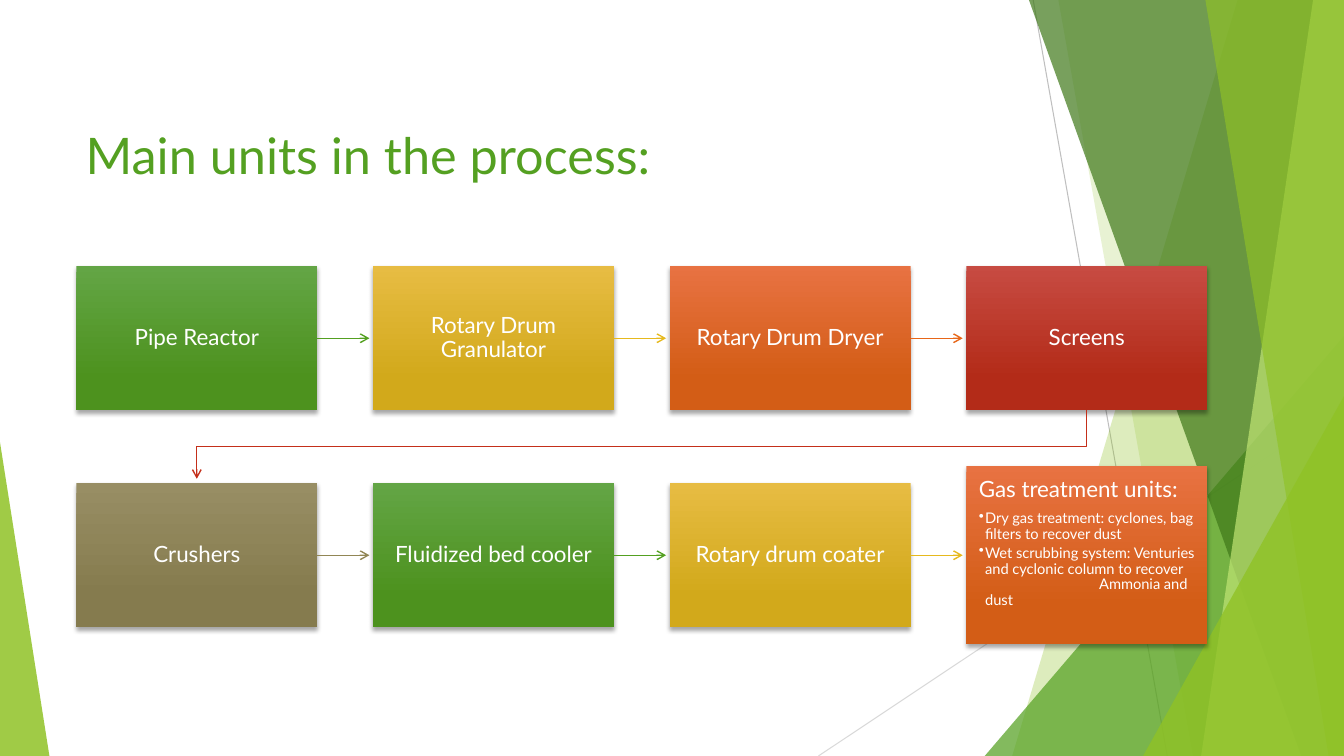
from dataclasses import dataclass, field

from lxml import etree
from pptx import Presentation
from pptx.dml.color import RGBColor
from pptx.enum.shapes import MSO_CONNECTOR, MSO_SHAPE
from pptx.enum.text import MSO_ANCHOR, MSO_AUTO_SIZE, PP_ALIGN
from pptx.oxml.ns import qn
from pptx.util import Pt

STRAIGHT = MSO_CONNECTOR.STRAIGHT
RECTANGLE, TRIANGLE = MSO_SHAPE.RECTANGLE, MSO_SHAPE.ISOSCELES_TRIANGLE
TOP, MIDDLE, BOTTOM = MSO_ANCHOR.TOP, MSO_ANCHOR.MIDDLE, MSO_ANCHOR.BOTTOM
LEFT, CENTER = PP_ALIGN.LEFT, PP_ALIGN.CENTER
NO_AUTO_SIZE = MSO_AUTO_SIZE.NONE
RIGHT_SIDE = 3


@dataclass
class Theme:
    """Colours, font and type sizes of the slide."""
    font: str = "Lato"
    title_size: float = 36
    box_size: float = 16
    bullet_size: float = 10.5
    white: str = "FFFFFF"
    title: str = "54A021"
    shadow: str = "000000"
    lime: str = "90C226"
    pale_lime: str = "C0E474"
    green: str = "54A021"
    dark_green: str = "3F7819"
    rule: str = "BFBFBF"
    pale_rule: str = "D9D9D9"
    ramps: dict = field(default_factory=lambda: {
        "green": ("54A021", "63A545", "4D921E"),
        "yellow": ("E6B91E", "E7BC43", "D2A91B"),
        "orange": ("E76618", "E87242", "D35D16"),
        "red": ("C42F1A", "C74B42", "B32B18"),
        "olive": ("918655", "988E64", "857B4E"),
    })


class SlideBuilder:
    """Draws styled elements on one slide."""

    def __init__(self, slide, theme):
        """Keep the slide and its theme."""
        self.slide, self.shapes, self.theme = slide, slide.shapes, theme

    def apply(self, target, formats):
        """Set each attribute named in formats."""
        for name, value in formats.items():
            setattr(target, name, value)

    def place(self, shape, left, top, width, height):
        """Move and size a shape in points."""
        self.apply(shape, {"left": Pt(left), "top": Pt(top), "width": Pt(width), "height": Pt(height)})

    def set_text(self, paragraph, text, size, color, formats):
        """Fill a paragraph with text in one style."""
        paragraph.text = text
        self.apply(paragraph, {"line_spacing": 0.9, "space_before": Pt(0), **formats})
        for line_break in paragraph._p.findall(qn("a:br")):
            etree.SubElement(line_break, qn("a:rPr"), sz=str(int(size * 100)))
        for run in paragraph.runs:
            self.apply(run.font, {"name": self.theme.font, "size": Pt(size)})
            run.font.color.rgb = RGBColor.from_string(color)

    def title(self, text, *box):
        """Format the title placeholder."""
        shape = self.shapes.title
        self.place(shape, *box)
        frame = shape.text_frame
        self.apply(frame, {"vertical_anchor": BOTTOM, "word_wrap": True, "auto_size": NO_AUTO_SIZE})
        self.set_text(frame.paragraphs[0], text, self.theme.title_size, self.theme.title, {"alignment": LEFT})

    def glass(self, shape, color, opacity):
        """Give a shape a translucent fill and no outline."""
        shape.shadow.inherit = False
        shape.line.fill.background()
        shape.fill.solid()
        shape.fill.fore_color.rgb = RGBColor.from_string(color)
        color_element = shape._element.spPr.find(f"{qn('a:solidFill')}/{qn('a:srgbClr')}")
        etree.SubElement(color_element, qn("a:alpha"), val=str(opacity * 1000))

    def band(self, top_left, bottom_left, color, opacity, top_right=960):
        """Draw a slanted band that reaches the right edge of the slide."""
        builder = self.shapes.build_freeform(Pt(top_left), 0)
        corners = [(top_right, 0), (960, 540), (bottom_left, 540)]
        builder.add_line_segments([(Pt(x), Pt(y)) for x, y in corners])
        self.glass(builder.convert_to_shape(), color, opacity)

    def triangle(self, box, apex, color, opacity):
        """Draw a translucent triangle."""
        shape = self.shapes.add_shape(TRIANGLE, *map(Pt, box))
        shape.adjustments[0] = apex
        self.glass(shape, color, opacity)

    def stroke(self, shape, color, width, arrow):
        """Style a line and optionally end it with an arrowhead."""
        shape.line.color.rgb = RGBColor.from_string(color)
        shape.line.width = Pt(width)
        if arrow:
            outline = shape._element.spPr.find(qn("a:ln"))
            etree.SubElement(outline, qn("a:tailEnd"), type="arrow")

    def line(self, start, end, color, width=0.75, arrow=False, source=None):
        """Draw a straight connector, joined to the source's right side if given."""
        connector = self.shapes.add_connector(STRAIGHT, *map(Pt, start + end))
        if source is not None:
            connector.begin_connect(source, RIGHT_SIDE)
        self.stroke(connector, color, width, arrow)
        etree.SubElement(connector._element.spPr, qn("a:effectLst"))

    def bent_arrow(self, points, color):
        """Draw an open arrow through several points."""
        first, *others = [(Pt(x), Pt(y)) for x, y in points]
        builder = self.shapes.build_freeform(*first)
        builder.add_line_segments(others, close=False)
        shape = builder.convert_to_shape()
        shape.fill.background()
        shape.shadow.inherit = False
        self.stroke(shape, color, 1, True)

    def unit(self, text, box, ramp, anchor=MIDDLE, alignment=CENTER):
        """Draw one process unit with a gradient and a soft shadow."""
        shape = self.shapes.add_shape(RECTANGLE, *map(Pt, box))
        shape.line.fill.background()
        shape.fill.gradient()
        shape.fill.gradient_angle = 270
        for stop, position, color in zip(shape.fill.gradient_stops, (0, 0.78), self.theme.ramps[ramp][1:]):
            stop.position = position
            stop.color.rgb = RGBColor.from_string(color)
        shape.shadow.inherit = False
        effects = shape._element.spPr.find(qn("a:effectLst"))
        shadow = etree.SubElement(effects, qn("a:outerShdw"), blurRad=str(Pt(3)), dist=str(Pt(2)),
                                  dir="5400000", rotWithShape="0")
        shadow_color = etree.SubElement(shadow, qn("a:srgbClr"), val=self.theme.shadow)
        etree.SubElement(shadow_color, qn("a:alpha"), val="35000")
        frame = shape.text_frame
        margins = {f"margin_{side}": Pt(8.96) for side in ("left", "top", "right", "bottom")}
        self.apply(frame, {"word_wrap": True, "vertical_anchor": anchor, **margins})
        self.set_text(frame.paragraphs[0], text, self.theme.box_size, self.theme.white,
                      {"alignment": alignment, "space_after": Pt(6)})
        return shape

    def bullet(self, shape, text, tab):
        """Add a bullet paragraph with one tab stop to a shape."""
        paragraph = shape.text_frame.add_paragraph()
        properties = paragraph._p.get_or_add_pPr()
        self.apply(paragraph, {"level": 1})
        properties.set("marL", str(Pt(4.5)))
        properties.set("indent", str(-Pt(4.5)))
        etree.SubElement(properties, qn("a:buChar"), char="•")
        tabs = etree.SubElement(properties, qn("a:tabLst"))
        etree.SubElement(tabs, qn("a:tab"), pos=str(Pt(tab)), algn="l")
        self.set_text(paragraph, text, self.theme.bullet_size, self.theme.white,
                      {"alignment": LEFT, "space_after": Pt(1.8)})


def draw_backdrop(builder, theme):
    """Draw the slanted green decoration."""
    builder.line((738, 0), (833.8, 540), theme.rule)
    builder.line((960, 290), (584.6, 540), theme.pale_rule)
    builder.band(884, 723, theme.lime, 30)
    builder.band(756, 852, theme.lime, 20)
    builder.triangle((703.4, 240, 256.6, 300), 1, theme.green, 72)
    builder.band(735, 929.5, theme.dark_green, 70)
    builder.band(938, 858, theme.pale_lime, 70)
    builder.band(861, 949, theme.lime, 65)
    builder.triangle((816.5, 283, 143.5, 257), 1, theme.lime, 80)
    builder.triangle((0, 316, 35.3, 224), 0, theme.lime, 85)


def draw_process(builder, theme):
    """Draw two rows of units and the arrows between them."""
    left, pitch, width, height = 54.5, 211.9, 172.2, 103.2
    arrow_length, gas_height = 37.2, 127.4
    rows = [
        (190, [("Pipe Reactor", "green"), ("Rotary Drum Granulator", "yellow"),
               ("Rotary Drum Dryer", "orange"), ("Screens", "red")]),
        (345, [("Crushers", "olive"), ("Fluidized bed cooler", "green"), ("Rotary drum coater", "yellow")]),
    ]
    for top, units in rows:
        middle = top + height / 2
        for column, (text, ramp) in enumerate(units):
            x = left + column * pitch
            shape = builder.unit(text, (x, top, width, height), ramp)
            if column < 3:
                start = x + width
                builder.line((start, middle), (start + arrow_length, middle), theme.ramps[ramp][0], 1, True, shape)
    first_center = left + width / 2
    last_center = first_center + 3 * pitch
    builder.bent_arrow([(last_center, 293.2), (last_center, 319), (first_center, 319), (first_center, 342)],
                       theme.ramps["red"][0])
    gas_box = (left + 3 * pitch, 345 + (height - gas_height) / 2, width, gas_height)
    gas = builder.unit("Gas treatment units:", gas_box, "orange", TOP, LEFT)
    for text in ("Dry gas treatment: cyclones, bag filters to recover dust",
                 "Wet scrubbing system: Venturies and cyclonic column to recover\v\tAmmonia and dust"):
        builder.bullet(gas, text, 86)


def main():
    """Build and save the slide."""
    presentation = Presentation()
    presentation.slide_width, presentation.slide_height = Pt(960), Pt(540)
    theme = Theme()
    builder = SlideBuilder(presentation.slides.add_slide(presentation.slide_layouts[5]), theme)
    draw_backdrop(builder, theme)
    builder.title("Main units in the process:", 54, 23, 867.6, 113)
    draw_process(builder, theme)
    presentation.save("out.pptx")


if __name__ == "__main__":
    main()
